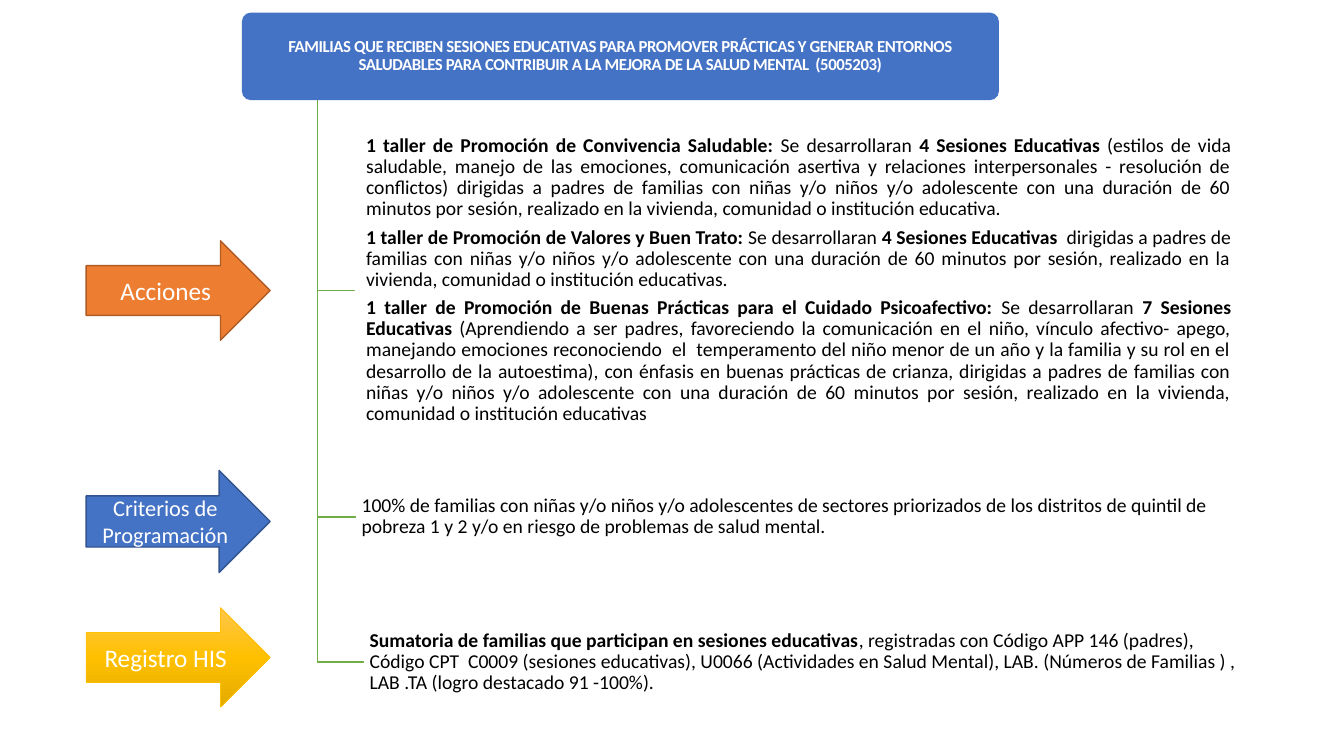
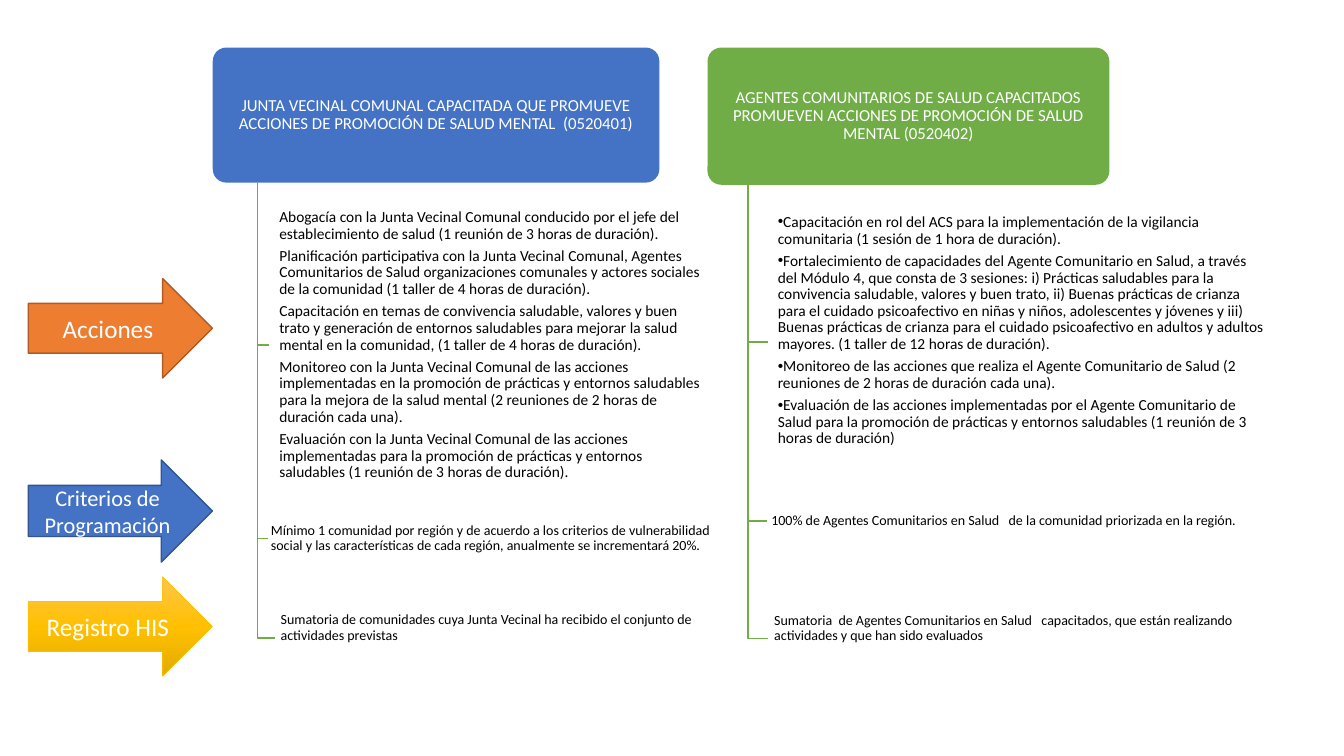
from copy import deepcopy
from dataclasses import dataclass
from typing import Any

from lxml import etree
from pptx import Presentation
from pptx import util as u
from pptx.dml import color as dml
from pptx.enum import shapes as sh
from pptx.enum import text as tx
from pptx.oxml import ns


@dataclass(frozen=True)
class Theme:
    font: str = "Calibri"
    white: str = "FFFFFF"
    black: str = "000000"
    blue: str = "4472C4"
    blue_edge: str = "325491"
    green: str = "70AD47"
    orange: str = "ED7D31"
    orange_edge: str = "AF5C24"
    gold: str = "FFC000"
    gold_stops: tuple[str, ...] = ("FFC64B", "FFC000", "E3AB00")
    heading: int = 12
    label: int = 18
    long_label: int = 16
    wide_body: int = 14
    column_body: int = 11
    column_note: int = 10
    line_spacing: float = 0.9
    gap_ratio: float = 0.36


THEME = Theme()


@dataclass(frozen=True)
class Box:
    left: float
    top: float
    width: float
    height: float


@dataclass(frozen=True)
class Style:
    size: int
    color: str = THEME.black
    align: Any = tx.PP_ALIGN.LEFT
    bold: bool = False
    bullet: str = ""
    spacing: int = 0


@dataclass(frozen=True)
class Panel:
    box: Box
    paragraphs: tuple[str, ...]
    style: Style
    inset: float
    lift: float = 0
    placeholder: int | None = None


@dataclass(frozen=True)
class Branch:
    heading: Panel
    fill: str
    trunk: float
    panels: tuple[Panel, ...]


@dataclass(frozen=True)
class Label:
    text: str
    fill: str
    edge: str
    edge_width: float
    size: int
    height: float
    stops: tuple[str, ...] = ()


@dataclass(frozen=True)
class Page:
    layout: str
    label_left: float
    label_tops: tuple[float, ...]
    branches: tuple[Branch, ...]


LABEL_WIDTH = 131.5
LABELS = (
    Label("Acciones", THEME.orange, THEME.orange_edge, 1, THEME.label, 71),
    Label("Criterios de Programación", THEME.blue, THEME.blue_edge, 1, THEME.long_label, 73),
    Label("Registro HIS", THEME.gold, THEME.gold, 0.5, THEME.label, 71, THEME.gold_stops),
)

HEADING = Style(THEME.heading, THEME.white, tx.PP_ALIGN.CENTER)
MAIN_HEADING = Style(THEME.heading, THEME.white, tx.PP_ALIGN.CENTER, bold=True, spacing=-30)
WORKSHOPS = Style(THEME.wide_body, align=tx.PP_ALIGN.JUSTIFY)
WIDE = Style(THEME.wide_body)
STEPS = Style(THEME.column_body)
BULLETS = Style(THEME.column_body, bullet="•")
NOTE = Style(THEME.column_note)

FAMILIES = Branch(
    Panel(Box(172.8, 9, 540.7, 62.5), (
        "FAMILIAS QUE RECIBEN SESIONES EDUCATIVAS PARA PROMOVER PRÁCTICAS Y GENERAR ENTORNOS SALUDABLES PARA CONTRIBUIR "
        "A LA MEJORA DE LA SALUD MENTAL  (5005203)",
    ), MAIN_HEADING, 4, placeholder=0),
    THEME.blue, 226.8, (
        Panel(Box(253.5, 88.3, 634, 238), (
            "**1 taller de Promoción de Convivencia Saludable:** Se desarrollaran **4 Sesiones Educativas **(estilos de vida "
            "saludable, manejo de las emociones, comunicación asertiva y relaciones interpersonales - resolución de conflictos) "
            "dirigidas a padres de familias con niñas y/o niños y/o adolescente con una duración de 60 minutos por sesión, "
            "realizado en la vivienda, comunidad o institución educativa.",
            "**1 taller de Promoción de Valores y Buen Trato:** Se desarrollaran **4 Sesiones Educativas  **dirigidas a padres "
            "de familias con niñas y/o niños y/o adolescente con una duración de 60 minutos por sesión, realizado en la "
            "vivienda, comunidad o institución educativas.",
            "**1 taller de Promoción de Buenas Prácticas para el Cuidado Psicoafectivo:** Se desarrollaran **7 Sesiones "
            "Educativas **(Aprendiendo a ser padres, favoreciendo la comunicación en el niño, vínculo afectivo- apego, "
            "manejando emociones reconociendo  el  temperamento del niño menor de un año y la familia y su rol en el "
            "desarrollo de la autoestima), con énfasis en buenas prácticas de crianza, dirigidas a padres de familias con "
            "niñas y/o niños y/o adolescente con una duración de 60 minutos por sesión, realizado en la vivienda, comunidad "
            "o institución educativas",
        ), WORKSHOPS, 8, 14.5, placeholder=1),
        Panel(Box(254.3, 332.2, 631, 74), (
            "100% de familias con niñas y/o niños y/o adolescentes de sectores priorizados de los distritos de quintil de "
            "pobreza 1 y 2 y/o en riesgo de problemas de salud mental.",
        ), WIDE, 4),
        Panel(Box(260, 435.5, 633, 75), (
            "**Sumatoria de familias que participan en sesiones educativas**, registradas con Código APP 146 (padres), Código "
            "CPT  C0009 (sesiones educativas), U0066 (Actividades en Salud Mental), LAB. (Números de Familias ) , LAB .TA "
            "(logro destacado 91 -100%).",
        ), WIDE, 4),
    ))

COUNCIL = Branch(
    Panel(Box(152, 34, 319, 96.5), (
        "JUNTA VECINAL COMUNAL CAPACITADA QUE PROMUEVE ACCIONES DE PROMOCIÓN DE SALUD MENTAL  (0520401)",
    ), HEADING, 5, placeholder=1),
    THEME.blue, 183.8, (
        Panel(Box(192.5, 146.5, 317, 200), (
            "Abogacía con la Junta Vecinal Comunal conducido por el jefe del establecimiento de salud (1 reunión de 3 horas "
            "de duración).",
            "Planificación participativa con la Junta Vecinal Comunal, Agentes Comunitarios de Salud organizaciones comunales "
            "y actores sociales de la comunidad (1 taller de 4 horas de duración).",
            "Capacitación en temas de convivencia saludable, valores y buen trato y generación de entornos saludables para "
            "mejorar la salud mental en la comunidad, (1 taller de 4 horas de duración).",
            "Monitoreo con la Junta Vecinal Comunal de las acciones implementadas en la promoción de prácticas y entornos "
            "saludables para la mejora de la salud mental (2 reuniones de 2 horas de duración cada una).",
            "Evaluación con la Junta Vecinal Comunal de las acciones implementadas para la promoción de prácticas y entornos "
            "saludables (1 reunión de 3 horas de duración).",
        ), STEPS, 7, placeholder=2),
        Panel(Box(191.5, 368.5, 321, 32.5), (
            "Mínimo 1 comunidad por región y de acuerdo a los criterios de vulnerabilidad  social y las características de "
            "cada región, anualmente se incrementará 20%.",
        ), NOTE, 2),
        Panel(Box(196.5, 412.3, 322, 87), (
            "Sumatoria de comunidades cuya Junta Vecinal ha recibido el conjunto de actividades previstas",
        ), NOTE, 4, 14.5),
    ))

AGENTS = Branch(
    Panel(Box(505.4, 34, 287, 98), (
        "AGENTES COMUNITARIOS DE SALUD CAPACITADOS PROMUEVEN ACCIONES DE PROMOCIÓN DE SALUD MENTAL (0520402)",
    ), HEADING, 5, placeholder=3),
    THEME.green, 534.2, (
        Panel(Box(548.6, 147.3, 364, 194), (
            "Capacitación en rol del ACS para la implementación de la vigilancia comunitaria (1 sesión de 1 hora de duración).",
            "Fortalecimiento de capacidades del Agente Comunitario en Salud, a través del Módulo 4, que consta de 3 sesiones: "
            "i) Prácticas saludables para la convivencia saludable, valores y buen trato, ii) Buenas prácticas de crianza para "
            "el cuidado psicoafectivo en niñas y niños, adolescentes y jóvenes y iii) Buenas prácticas de crianza para el "
            "cuidado psicoafectivo en adultos y adultos mayores. (1 taller de 12 horas de duración).",
            "Monitoreo de las acciones que realiza el Agente Comunitario de Salud (2 reuniones de 2 horas de duración cada una).",
            "Evaluación de las acciones implementadas por el Agente Comunitario de Salud para la promoción de prácticas y "
            "entornos saludables (1 reunión de 3 horas de duración)",
        ), BULLETS, 7, 16, placeholder=4),
        Panel(Box(548, 354.5, 354.5, 35.5), (
            "100% de Agentes Comunitarios en Salud   de la comunidad priorizada en la región.",
        ), NOTE, 3),
        Panel(Box(548.5, 415.5, 356, 81.5), (
            "Sumatoria  de Agentes Comunitarios en Salud   capacitados, que están realizando actividades y que han sido evaluados",
        ), NOTE, 4.5, 14.5),
    ))

PAGES = (
    Page("Title and Content", 61.5, (172, 336, 434), (FAMILIES,)),
    Page("Comparison", 20.2, (199, 328.5, 412), (COUNCIL, AGENTS)),
)


def assign(target: Any, values: dict[str, Any]) -> None:
    for name, value in values.items():
        setattr(target, name, value)


def points(*lengths: float) -> tuple[u.Length, ...]:
    return tuple(u.Pt(length) for length in lengths)


def bounds(box: Box) -> tuple[u.Length, ...]:
    return points(box.left, box.top, box.width, box.height)


def paint(fill: Any, value: str) -> None:
    fill.solid()
    fill.fore_color.rgb = dml.RGBColor.from_string(value)


def write_run(paragraph: Any, words: str, style: Style, bold: bool) -> None:
    run = paragraph.add_run()
    run.text = words
    assign(run.font, {"name": THEME.font, "size": u.Pt(style.size), "bold": bold})
    paint(run.font.fill, style.color)
    if style.spacing:
        run._r.get_or_add_rPr().set("spc", str(style.spacing))


def write_paragraph(paragraph: Any, source: str, style: Style) -> None:
    gap = u.Pt(round(style.size * THEME.gap_ratio))
    assign(paragraph, {"alignment": style.align, "line_spacing": THEME.line_spacing, "space_before": 0, "space_after": gap})
    properties = paragraph._p.get_or_add_pPr()
    properties.attrib.update({"marL": "0", "indent": "0"})
    marker = etree.SubElement(properties, ns.qn("a:buChar" if style.bullet else "a:buNone"))
    if style.bullet:
        marker.set("char", style.bullet)
    for index, words in enumerate(source.split("**")):
        if words:
            write_run(paragraph, words, style, style.bold or index % 2 == 1)


def write_panel(slide: Any, panel: Panel) -> None:
    if panel.placeholder is None:
        holder = slide.shapes.add_textbox(*bounds(panel.box))
    else:
        holder = slide.placeholders[panel.placeholder]
        assign(holder, dict(zip(("left", "top", "width", "height"), bounds(panel.box))))
        holder.element.getparent().append(holder.element)
    frame = holder.text_frame
    assign(frame, {"word_wrap": True, "auto_size": tx.MSO_AUTO_SIZE.NONE, "vertical_anchor": tx.MSO_ANCHOR.MIDDLE})
    margins = points(panel.inset, 1, panel.inset, 1 + panel.lift)
    assign(frame, dict(zip(("margin_left", "margin_top", "margin_right", "margin_bottom"), margins)))
    for index, source in enumerate(panel.paragraphs):
        write_paragraph(frame.add_paragraph() if index else frame.paragraphs[0], source, panel.style)


def draw_card(slide: Any, panel: Panel, fill: str, opacity: int = 100) -> None:
    card = slide.shapes.add_shape(sh.MSO_SHAPE.ROUNDED_RECTANGLE, *bounds(panel.box))
    card.adjustments[0] = 0.1
    card.shadow.inherit = False
    paint(card.fill, fill)
    if opacity < 100:
        tint = next(card.element.spPr.iter(ns.qn("a:srgbClr")))
        etree.SubElement(tint, ns.qn("a:alpha")).set("val", str(opacity * 1000))
    card.line.fill.background()
    write_panel(slide, panel)


def draw_elbow(slide: Any, trunk: float, top: float, box: Box) -> None:
    middle = box.top + box.height / 2
    builder = slide.shapes.build_freeform(*points(trunk, top))
    builder.add_line_segments([points(trunk, middle), points(box.left, middle)], close=False)
    elbow = builder.convert_to_shape()
    elbow.shadow.inherit = False
    elbow.fill.background()
    paint(elbow.line.fill, THEME.green)
    elbow.line.width = u.Pt(1)


def draw_branch(slide: Any, branch: Branch) -> None:
    top = branch.heading.box
    draw_card(slide, branch.heading, branch.fill)
    for panel in branch.panels:
        draw_elbow(slide, branch.trunk, top.top + top.height, panel.box)
        draw_card(slide, panel, THEME.white, 90)


def draw_label(slide: Any, label: Label, left: float, top: float) -> None:
    arrow = slide.shapes.add_shape(sh.MSO_SHAPE.RIGHT_ARROW, *points(left, top, LABEL_WIDTH, label.height))
    arrow.shadow.inherit = False
    paint(arrow.fill, label.fill)
    if label.stops:
        arrow.fill.gradient()
        arrow.fill.gradient_angle = 270
        stops = next(arrow.element.iter(ns.qn("a:gsLst")))
        stops.append(deepcopy(stops[0]))
        for index, (stop, value) in enumerate(zip(arrow.fill.gradient_stops, label.stops)):
            stop.position = index / (len(label.stops) - 1)
            stop.color.rgb = dml.RGBColor.from_string(value)
    paint(arrow.line.fill, label.edge)
    arrow.line.width = u.Pt(label.edge_width)
    assign(arrow.text_frame, {"word_wrap": True, "vertical_anchor": tx.MSO_ANCHOR.MIDDLE})
    paragraph = arrow.text_frame.paragraphs[0]
    paragraph.alignment = tx.PP_ALIGN.CENTER
    write_run(paragraph, label.text, Style(label.size, THEME.white), False)


def main() -> None:
    deck = Presentation()
    assign(deck, {"slide_width": u.Pt(960), "slide_height": u.Pt(540)})
    for page in PAGES:
        slide = deck.slides.add_slide(deck.slide_layouts.get_by_name(page.layout))
        for branch in page.branches:
            draw_branch(slide, branch)
        for label, top in zip(LABELS, page.label_tops):
            draw_label(slide, label, page.label_left, top)
        for holder in list(slide.placeholders):
            if not holder.text_frame.text:
                holder.element.getparent().remove(holder.element)
    deck.save("out.pptx")


if __name__ == "__main__":
    main()
